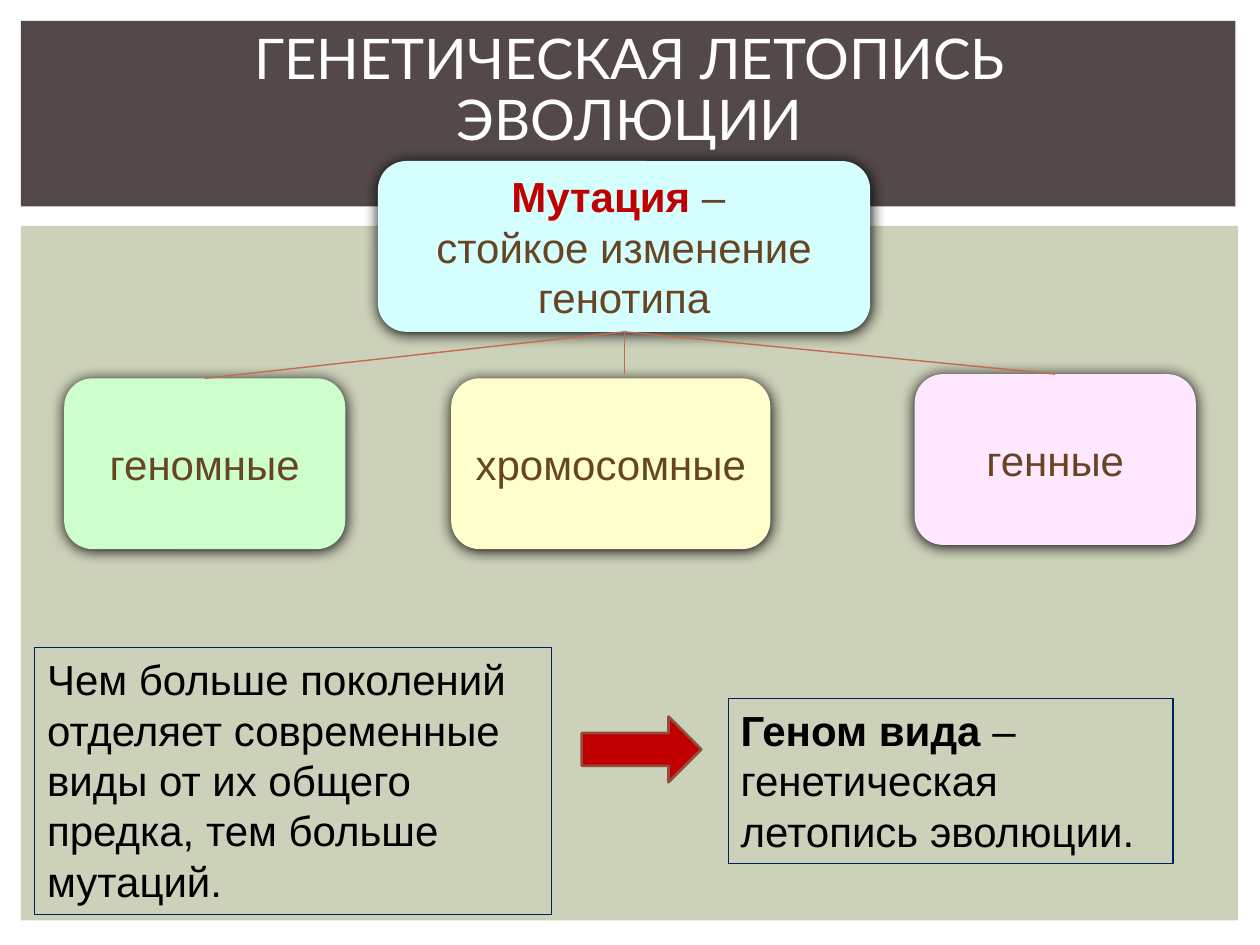
import pptx
import pptx.util
import pptx.dml.color
import pptx.enum.shapes
import pptx.enum.text
import pptx.oxml
import pptx.oxml.ns

Pt = pptx.util.Pt
KIND = pptx.enum.shapes.MSO_SHAPE
ALIGN = pptx.enum.text.PP_ALIGN
ANCHOR = pptx.enum.text.MSO_ANCHOR
BROWN = "684522"


def color(code):
    return pptx.dml.color.RGBColor.from_string(code)


def effect(shape, inner=""):
    space = pptx.oxml.ns.nsdecls("a")
    xml = f"<a:effectLst {space}>{inner}</a:effectLst>"
    shape._element.spPr.append(pptx.oxml.parse_xml(xml))


def block(slide, kind, place, fill=None, line=None, width=0.75):
    shape = slide.shapes.add_shape(kind, *map(Pt, place))
    shape.shadow.inherit = False
    if fill:
        shape.fill.solid()
        shape.fill.fore_color.rgb = color(fill)
    else:
        shape.fill.background()
    if line:
        shape.line.color.rgb = color(line)
        shape.line.width = Pt(width)
    else:
        shape.line.fill.background()
    return shape


def write(shape, runs, ink, size=24, face="Arial",
          align=ALIGN.CENTER, anchor=ANCHOR.MIDDLE):
    frame = shape.text_frame
    frame.word_wrap = True
    frame.vertical_anchor = anchor
    para = frame.paragraphs[0]
    para.alignment = align
    para.font.size = Pt(size)
    para.font.name = face
    para.font.color.rgb = color(ink)
    for text, bold, tint in runs:
        if text == "\n":
            para.add_line_break()
            continue
        run = para.add_run()
        run.text = text
        if bold:
            run.font.bold = True
        if tint:
            run.font.color.rgb = color(tint)
    return para


def title(slide, text):
    box = slide.shapes.add_textbox(Pt(50), Pt(29), Pt(620), Pt(47))
    para = write(box, [(text, False, None)], "FFFFFF", 32, "Lato")
    para.line_spacing = 0.9


def note(slide, place, runs):
    shape = block(slide, KIND.RECTANGLE, place, line="002060")
    write(shape, runs, "000000", align=ALIGN.LEFT, anchor=ANCHOR.TOP)


def card(slide, place, fill, runs):
    shape = block(slide, KIND.ROUNDED_RECTANGLE, place, fill)
    shape._element.spPr.remove(shape._element.spPr.find(pptx.oxml.ns.qn("a:effectLst")))
    effect(shape, f'<a:outerShdw blurRad="{Pt(8.5)}" dist="{Pt(1)}" '
                  'dir="5400000" rotWithShape="0"><a:srgbClr val="000000"/>'
                  '</a:outerShdw>')
    write(shape, runs, BROWN)


def link(slide, start, end):
    line = slide.shapes.add_connector(
        pptx.enum.shapes.MSO_CONNECTOR.STRAIGHT, *map(Pt, start + end))
    line.line.color.rgb = color("C66951")
    line.line.width = Pt(0.79)
    effect(line)


def main():
    deck = pptx.Presentation()
    deck.slide_width, deck.slide_height = Pt(720), Pt(540)
    slide = deck.slides.add_slide(deck.slide_layouts[6])

    block(slide, KIND.RECTANGLE, (12, 129, 695.5, 397), "CCD1B9")
    block(slide, KIND.RECTANGLE, (12, 12, 694, 106), "534949")
    title(slide, "ГЕНЕТИЧЕСКАЯ ЛЕТОПИСЬ ЭВОЛЮЦИИ")

    note(slide, (19.8, 370, 295.4, 152.6), [
        ("Чем больше поколений отделяет современные виды "
         "от их общего предка, тем больше мутаций.", False, None)])
    note(slide, (416.2, 399, 254.2, 94.5), [
        ("Геном вида ", True, None),
        ("– генетическая летопись эволюции.", False, None)])
    block(slide, KIND.RIGHT_ARROW, (332.4, 409.5, 68.4, 37.5),
          "C00000", "924E3C", 1.5)

    card(slide, (216, 92, 281.3, 97.6), "D5FFFF", [
        ("Мутация ", True, "C00000"), ("– ", False, None),
        ("\n", False, None), ("стойкое изменение генотипа", False, None)])
    kinds = [
        ("геномные", 36.7, 216.2, 160.6, "CCFFCC"),
        ("хромосомные", 257.8, 216.2, 182.4, "FFFFCD"),
        ("генные", 522.7, 213.8, 160.6, "FFE7FF"),
    ]
    for text, left, top, width, fill in kinds:
        card(slide, (left, top, width, 97.6), fill, [(text, False, None)])
    for end in [(117, 216.2), (356.7, 213.8), (603, 213.8)]:
        link(slide, (356.7, 189.6), end)

    deck.save("out.pptx")


if __name__ == "__main__":
    main()
